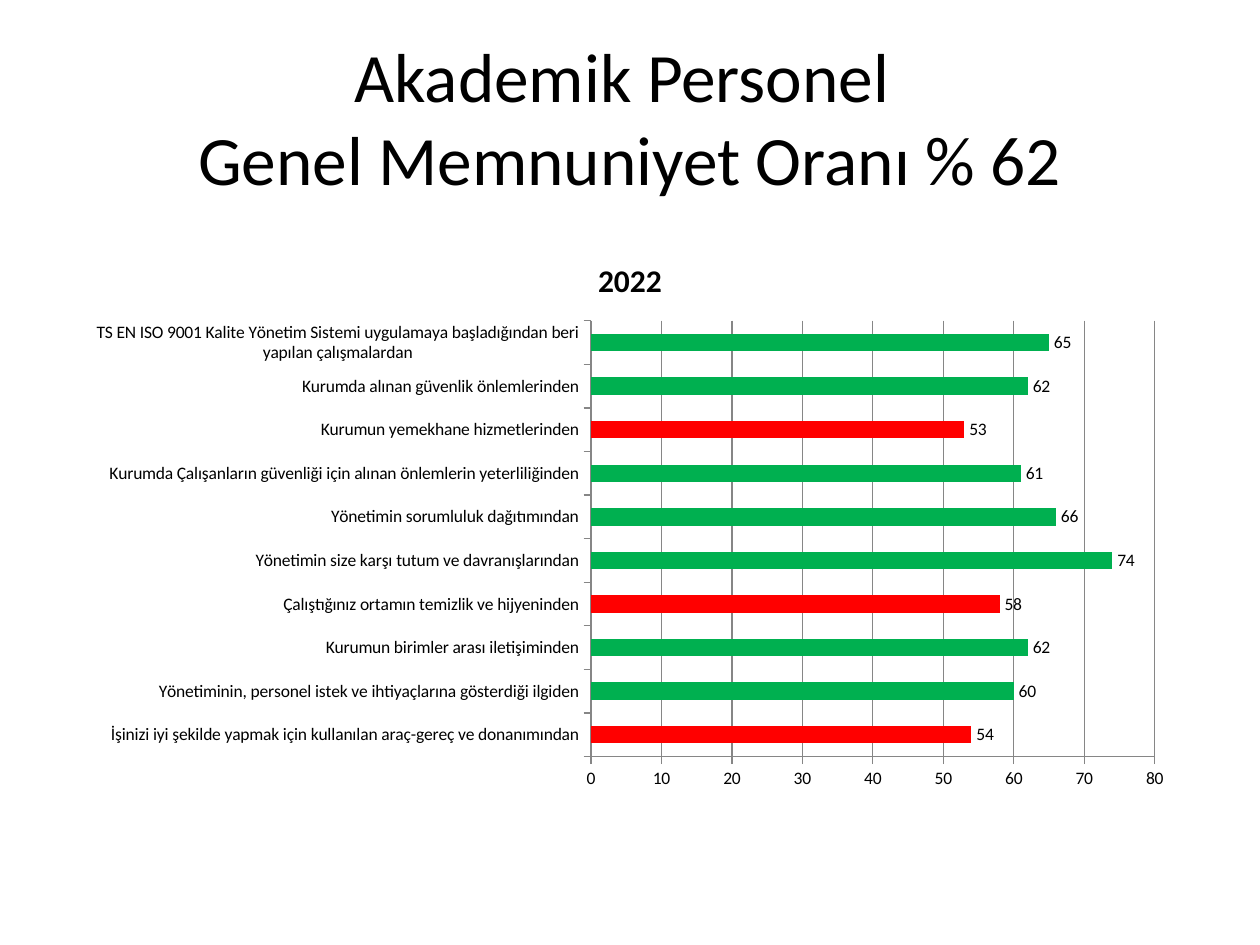
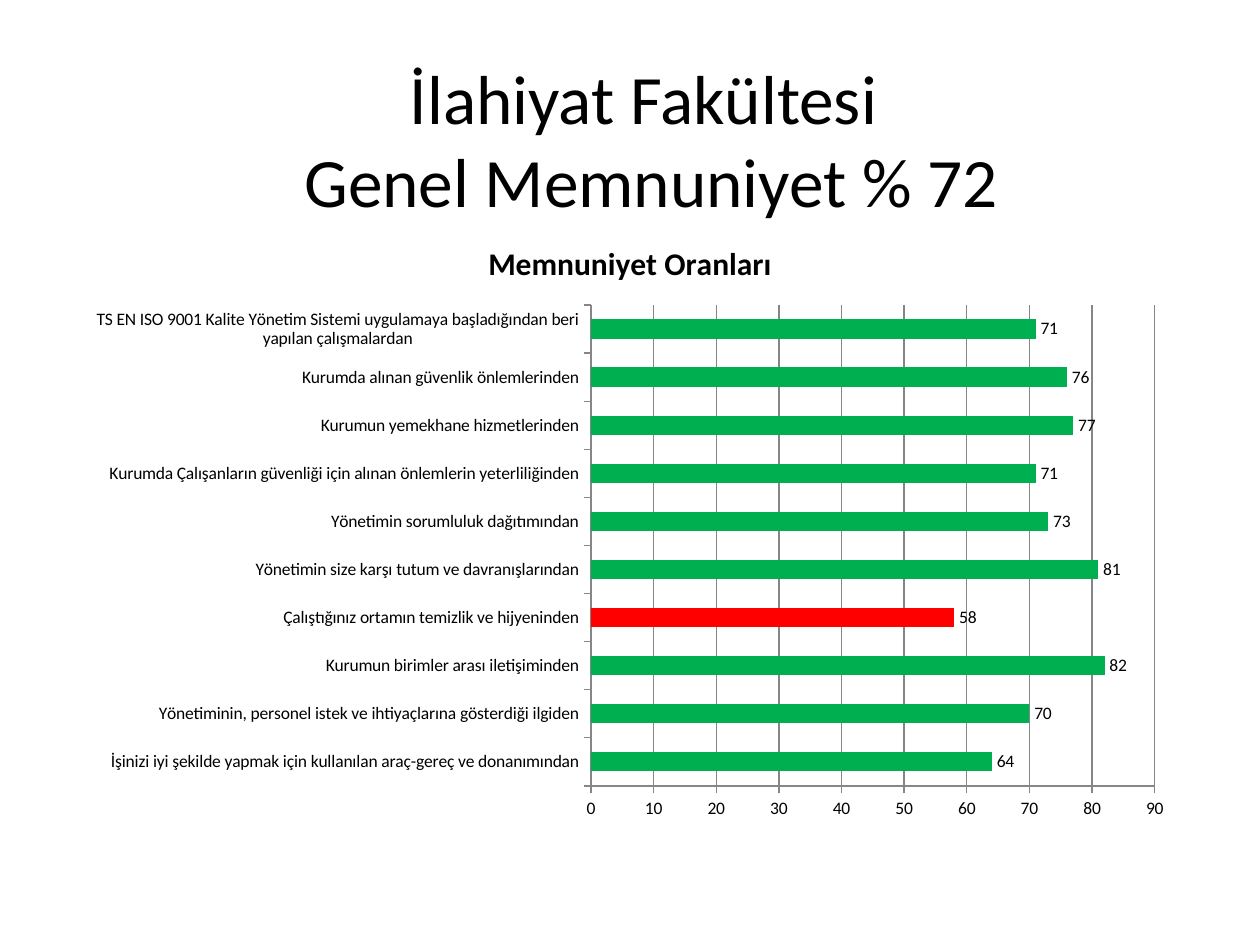
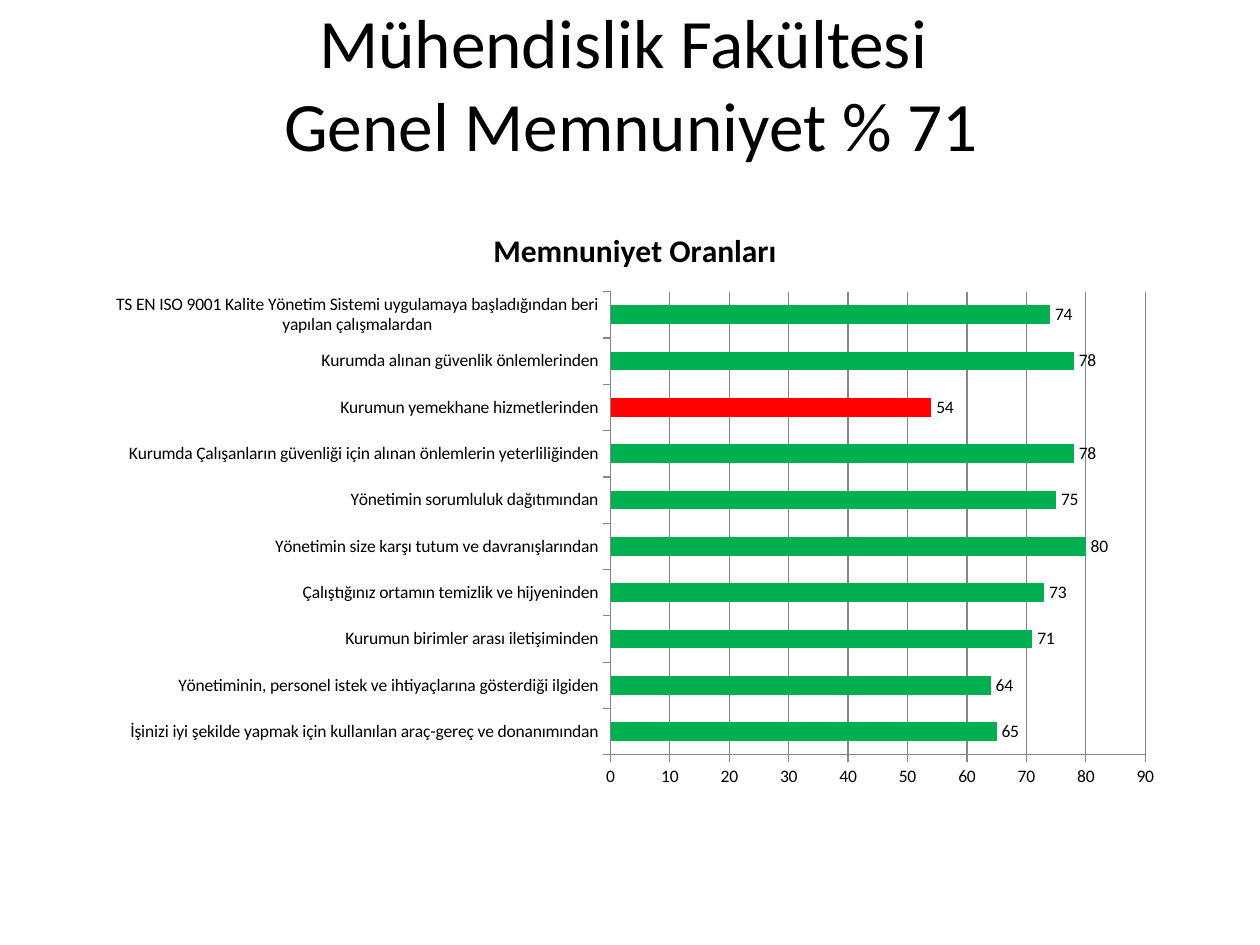
from dataclasses import dataclass

from pptx import Presentation
from pptx.chart.axis import CategoryAxis
from pptx.chart.data import CategoryChartData
from pptx.dml.color import RGBColor
from pptx.enum.chart import XL_CHART_TYPE, XL_LABEL_POSITION, XL_TICK_MARK
from pptx.enum.text import MSO_ANCHOR, PP_ALIGN
from pptx.slide import Slide
from pptx.util import Emu, Pt

PX = 9144  # EMU per px, at 100 px to the inch


@dataclass(frozen=True)
class Theme:
    font: str = "Calibri"
    text: RGBColor = RGBColor(0x00, 0x00, 0x00)
    grid: RGBColor = RGBColor(0x86, 0x86, 0x86)
    satisfied: RGBColor = RGBColor(0x00, 0xB0, 0x50)
    unsatisfied: RGBColor = RGBColor(0xFF, 0x00, 0x00)
    title_size: float = 39.6
    chart_title_size: float = 18
    label_size: float = 10
    line_width: float = 0.75


@dataclass(frozen=True)
class Box:
    left: int
    top: int
    width: int
    height: int

    def emu(self) -> tuple[Emu, ...]:
        return tuple(Emu(n * PX) for n in (self.left, self.top, self.width, self.height))


@dataclass(frozen=True)
class Survey:
    title: str
    title_box: Box
    series: str
    chart_box: Box
    axis_max: int
    scores: tuple[int, ...]


THEME = Theme()
THRESHOLD = 60  # scores below this are drawn as unsatisfied
QUESTIONS = (
    "İşinizi iyi şekilde yapmak için kullanılan araç-gereç ve donanımından",
    "Yönetiminin, personel istek ve ihtiyaçlarına gösterdiği ilgiden",
    "Kurumun birimler arası iletişiminden",
    "Çalıştığınız ortamın temizlik ve hijyeninden",
    "Yönetimin size karşı tutum ve davranışlarından",
    "Yönetimin sorumluluk dağıtımından",
    "Kurumda Çalışanların güvenliği için alınan önlemlerin yeterliliğinden",
    "Kurumun yemekhane hizmetlerinden",
    "Kurumda alınan güvenlik önlemlerinden",
    "TS EN ISO 9001 Kalite Yönetim Sistemi uygulamaya başladığından beri yapılan çalışmalardan",
)
SURVEYS = (
    Survey("Akademik Personel \vGenel Memnuniyet Oranı % 62", Box(50, 30, 900, 125),
           "2022", Box(59, 186, 882, 449), 80,
           (54, 60, 62, 58, 74, 66, 61, 53, 62, 65)),
    Survey("İlahiyat Fakültesi \vGenel Memnuniyet % 72", Box(67, 47, 900, 125),
           "Memnuniyet Oranları", Box(59, 172, 882, 487), 90,
           (64, 70, 82, 58, 81, 73, 71, 77, 76, 71)),
    Survey("Mühendislik Fakültesi \vGenel Memnuniyet % 71", Box(51, 3, 900, 125),
           "Memnuniyet Oranları", Box(75, 162, 858, 472), 90,
           (65, 64, 71, 73, 80, 75, 78, 54, 78, 74)),
)


def style_font(font, *, size: float, bold: bool = False) -> None:
    font.name = THEME.font
    font.size = Pt(size)
    font.bold = bold
    font.color.rgb = THEME.text


def style_line(line) -> None:
    line.color.rgb = THEME.grid
    line.width = Pt(THEME.line_width)


def add_text(s: Slide, text: str, box: Box, *, size: float) -> None:
    tf = s.shapes.add_textbox(*box.emu()).text_frame
    tf.word_wrap = True
    tf.vertical_anchor = MSO_ANCHOR.MIDDLE
    p = tf.paragraphs[0]
    p.text = text
    p.alignment = PP_ALIGN.CENTER
    for r in p.runs:
        style_font(r.font, size=size)


def style_axis(axis: CategoryAxis) -> None:
    axis.major_tick_mark = XL_TICK_MARK.OUTSIDE
    axis.minor_tick_mark = XL_TICK_MARK.NONE
    style_line(axis.format.line)
    style_font(axis.tick_labels.font, size=THEME.label_size)


def add_score_chart(s: Slide, survey: Survey) -> None:
    data = CategoryChartData()
    data.categories = QUESTIONS
    data.add_series(survey.series, survey.scores)
    chart = s.shapes.add_chart(XL_CHART_TYPE.BAR_CLUSTERED, *survey.chart_box.emu(), data).chart
    style_font(chart.font, size=THEME.label_size)
    chart.has_legend = False
    chart.has_title = True
    p = chart.chart_title.text_frame.paragraphs[0]
    r = p.add_run()
    r.text = survey.series
    style_font(r.font, size=THEME.chart_title_size, bold=True)

    style_axis(chart.category_axis)
    values = chart.value_axis
    style_axis(values)
    values.minimum_scale = 0
    values.maximum_scale = survey.axis_max
    values.major_unit = 10
    values.has_major_gridlines = True
    style_line(values.major_gridlines.format.line)

    plot = chart.plots[0]
    plot.gap_width = 150
    plot.vary_by_categories = False
    plot.has_data_labels = True
    labels = plot.data_labels
    labels.show_value = True
    labels.position = XL_LABEL_POSITION.OUTSIDE_END
    style_font(labels.font, size=THEME.label_size)

    bars = plot.series[0]
    bars.invert_if_negative = False
    bars.format.fill.solid()
    bars.format.fill.fore_color.rgb = THEME.satisfied
    for i, score in enumerate(survey.scores):
        if score < THRESHOLD:
            fill = bars.points[i].format.fill
            fill.solid()
            fill.fore_color.rgb = THEME.unsatisfied


def main() -> None:
    prs = Presentation()
    prs.slide_width, prs.slide_height = Emu(1000 * PX), Emu(750 * PX)
    for survey in SURVEYS:
        s = prs.slides.add_slide(prs.slide_layouts[6])
        add_text(s, survey.title, survey.title_box, size=THEME.title_size)
        add_score_chart(s, survey)
    prs.save("out.pptx")


if __name__ == "__main__":
    main()
